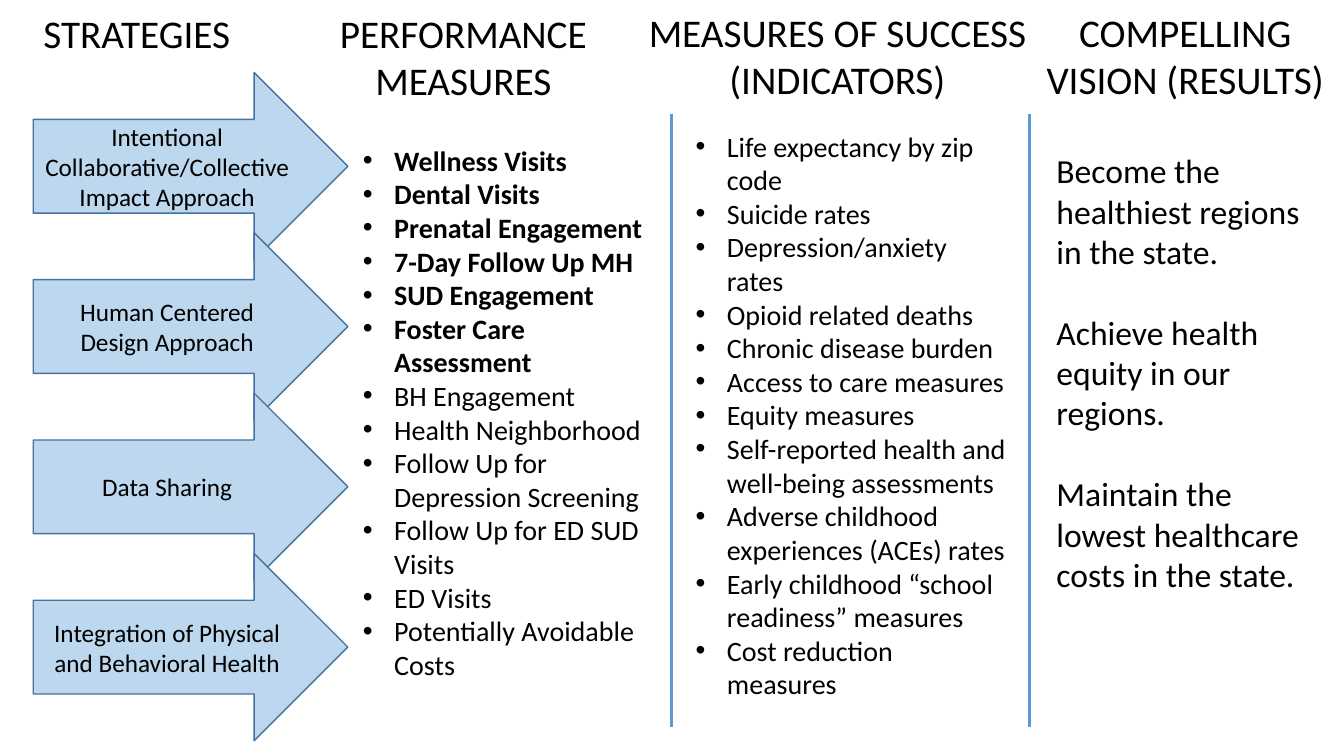
from dataclasses import dataclass

from lxml import etree
from pptx import Presentation
from pptx.dml.color import RGBColor
from pptx.enum.shapes import MSO_CONNECTOR as CONN, MSO_SHAPE as SHAPE
from pptx.enum.text import MSO_ANCHOR as ANCHOR, MSO_AUTO_SIZE as AUTO, PP_ALIGN as ALIGN
from pptx.oxml.ns import qn
from pptx.util import Inches, Pt


@dataclass(frozen=True)
class Theme:
    font: str = "Calibri"
    text: RGBColor = RGBColor(0x00, 0x00, 0x00)
    arrow_fill: RGBColor = RGBColor(0xBD, 0xD7, 0xEE)
    arrow_line: RGBColor = RGBColor(0x43, 0x73, 0x9E)
    divider: RGBColor = RGBColor(0x5B, 0x9B, 0xD5)
    heading: int = 28
    vision: int = 24
    items: int = 20
    arrow: int = 18


T = Theme()


def write(sp, lines, *, size, align=ALIGN.LEFT, anchor=ANCHOR.TOP, gap=0,
          bold_lines=0, bullets=False, fit=AUTO.SHAPE_TO_FIT_TEXT):
    tf = sp.text_frame
    tf.word_wrap = True
    tf.auto_size = fit
    tf.vertical_anchor = anchor
    for i, line in enumerate(lines):
        p = tf.add_paragraph() if i else tf.paragraphs[0]
        p.alignment = align
        p.space_before = Pt(gap if i else 0)
        if bullets:
            pPr = p._p.get_or_add_pPr()
            pPr.set("marL", str(Inches(0.31)))
            pPr.set("indent", str(-Inches(0.31)))
            etree.SubElement(pPr, qn("a:buFont")).set("typeface", "Arial")
            etree.SubElement(pPr, qn("a:buChar")).set("char", "•")
        r = p.add_run()
        r.text = line
        r.font.name = T.font
        r.font.size = Pt(size)
        r.font.bold = i < bold_lines
        r.font.color.rgb = T.text


def place(sp, left, top, width, height):
    sp.left, sp.top = Inches(left), Inches(top)
    sp.width, sp.height = Inches(width), Inches(height)
    return sp


prs = Presentation()
prs.slide_width, prs.slide_height = Inches(13.33), Inches(7.5)
s = prs.slides.add_slide(prs.slide_layouts[4])
ph = {sp.placeholder_format.idx: sp for sp in s.placeholders}

# Column headings
vision_heading = s.shapes.add_textbox(0, 0, 0, 0)
headings = [
    (ph[0], "STRATEGIES", (0.33, 0.04, 2.53, 0.57), ALIGN.LEFT),
    (ph[1], "PERFORMANCE MEASURES", (3.03, 0.04, 3.13, 1.04), ALIGN.CENTER),
    (ph[3], "MEASURES OF SUCCESS (INDICATORS)", (6.21, 0.03, 4.19, 1.04), ALIGN.CENTER),
    (vision_heading, "COMPELLING VISION (RESULTS)", (10.19, 0.03, 3.13, 1.04), ALIGN.CENTER),
]
for sp, text, box, align in headings:
    write(place(sp, *box), [text], size=T.heading, align=align)

# Strategy arrows
strategies = [
    "Intentional Collaborative/Collective Impact Approach",
    "Human Centered Design Approach",
    "Data Sharing",
    "Integration of Physical and Behavioral Health",
]
for i, text in enumerate(strategies):
    sp = s.shapes.add_shape(SHAPE.RIGHT_ARROW, Inches(0.33), Inches(0.72 + 1.59 * i),
                            Inches(3.12), Inches(1.86))
    sp.shadow.inherit = False
    sp.fill.solid()
    sp.fill.fore_color.rgb = T.arrow_fill
    sp.line.color.rgb = T.arrow_line
    sp.line.width = Pt(1)
    write(sp, [text], size=T.arrow, align=ALIGN.CENTER, anchor=ANCHOR.MIDDLE, fit=AUTO.NONE)

# Column dividers
for x in (6.66, 10.21):
    line = s.shapes.add_connector(CONN.STRAIGHT, Inches(x), Inches(1.13), Inches(x), Inches(7.21))
    line.line.color.rgb = T.divider
    line.line.width = Pt(2.5)
    etree.SubElement(line._element.spPr, qn("a:effectLst"))

# Performance measures
measures = [
    "Wellness Visits", "Dental Visits", "Prenatal Engagement", "7-Day Follow Up MH",
    "SUD Engagement", "Foster Care Assessment", "BH Engagement", "Health Neighborhood",
    "Follow Up for Depression Screening", "Follow Up for ED SUD Visits", "ED Visits",
    "Potentially Avoidable Costs",
]
write(place(ph[2], 3.5, 1.37, 3.13, 5.7), measures, size=T.items, bold_lines=6, bullets=True)

# Indicators
indicators = [
    "Life expectancy by zip code", "Suicide rates", "Depression/anxiety rates",
    "Opioid related deaths", "Chronic disease burden", "Access to care measures",
    "Equity measures", "Self-reported health and well-being assessments",
    "Adverse childhood experiences (ACEs) rates",
    "Early childhood “school readiness” measures", "Cost reduction measures",
]
write(place(ph[4], 6.8, 1.23, 3.29, 6.16), indicators, size=T.items, bullets=True)

# Vision, with one line of space between results
results = [
    "Become the healthiest regions in the state.",
    "Achieve health equity in our regions.",
    "Maintain the lowest healthcare costs in the state.",
]
vision = s.shapes.add_textbox(Inches(10.38), Inches(1.44), Inches(2.74), Inches(4.54))
write(vision, results, size=T.vision, gap=29)

# Unused footer placeholders
for idx, sp in ph.items():
    if idx > 4:
        sp._element.getparent().remove(sp._element)

prs.save("out.pptx")
